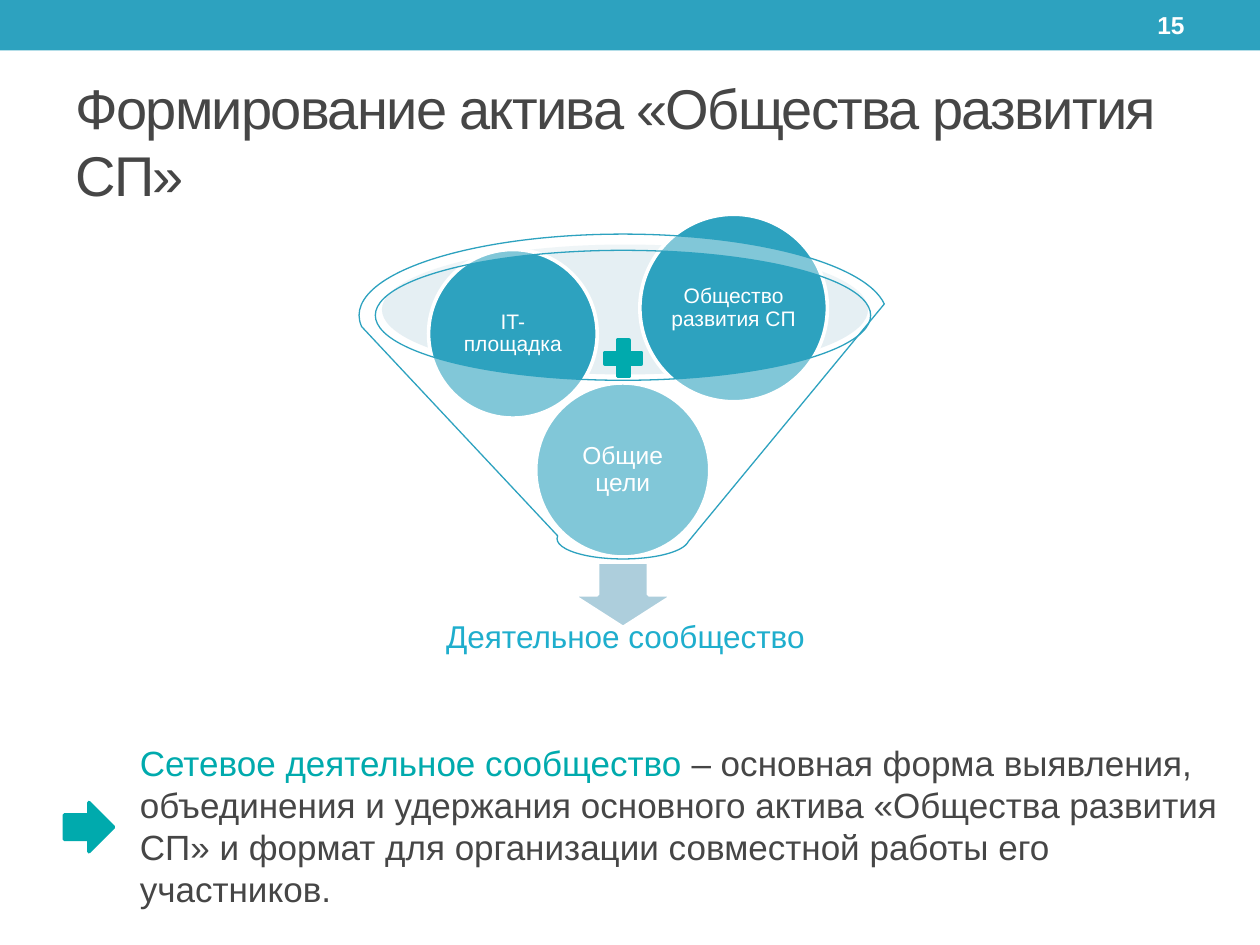
"""Build the funnel slide about forming an active community."""
from lxml import etree
from pptx import Presentation
from pptx.dml.color import RGBColor
from pptx.enum.shapes import MSO_SHAPE
from pptx.enum.text import MSO_ANCHOR, PP_ALIGN
from pptx.oxml.ns import qn
from pptx.util import Cm, Pt

RECT, OVAL, FUNNEL = MSO_SHAPE.RECTANGLE, MSO_SHAPE.OVAL, MSO_SHAPE.FUNNEL
DOWN, RIGHT, PLUS = MSO_SHAPE.DOWN_ARROW, MSO_SHAPE.RIGHT_ARROW, MSO_SHAPE.MATH_PLUS
MIDDLE, TOP = MSO_ANCHOR.MIDDLE, MSO_ANCHOR.TOP
ALIGN_L, ALIGN_C, ALIGN_R = PP_ALIGN.LEFT, PP_ALIGN.CENTER, PP_ALIGN.RIGHT
WHITE = RGBColor(0xFF, 0xFF, 0xFF)
BLUE = RGBColor(0x2D, 0xA2, 0xBF)
PALE = RGBColor(0xBE, 0xD7, 0xE2)
MIST = RGBColor(0xAD, 0xCE, 0xDC)
SKY = RGBColor(0x1F, 0xAE, 0xCD)
TEAL = RGBColor(0x00, 0xAA, 0xAD)
GREY = RGBColor(0x46, 0x46, 0x46)


def add_shape(kind, x, y, w, h, fill, line=None, width=2.08, alpha=None):
    sp = s.shapes.add_shape(kind, Cm(x), Cm(y), Cm(w), Cm(h))
    sp.shadow.inherit = False
    sp.fill.solid()
    sp.fill.fore_color.rgb = fill
    if alpha:
        clr = sp.fill._xPr.find(qn("a:solidFill"))[0]
        etree.SubElement(clr, qn("a:alpha")).set("val", str(alpha * 1000))
    if line is None:
        sp.line.fill.background()
    else:
        sp.line.color.rgb = line
        sp.line.width = Pt(width)
    return sp


def write(sp, runs, size, align, anchor=MIDDLE, inset=None, spacing=None):
    tf = sp.text_frame
    tf.word_wrap = True
    tf.vertical_anchor = anchor
    if inset is not None:
        tf.margin_left = tf.margin_right = Cm(inset)
        tf.margin_top = tf.margin_bottom = Cm(inset)
    p = tf.paragraphs[0]
    p.alignment = align
    if spacing:
        p.line_spacing = spacing
    for text, color in runs:
        r = p.add_run()
        r.text = text
        r.font.name = "Arial"
        r.font.size = Pt(size)
        r.font.color.rgb = color
    return p


prs = Presentation()
prs.slide_width, prs.slide_height = Cm(25.4), Cm(19.05)
s = prs.slides.add_slide(prs.slide_layouts[6])

add_shape(RECT, 0, 0, 25.4, 1.02, BLUE)
title = s.shapes.add_textbox(Cm(1.27), Cm(1.47), Cm(22.86), Cm(2.74))
p = write(title, [("Формирование актива «Общества развития СП»", GREY)], 32, ALIGN_L)
p.runs[0]._r.get_or_add_rPr().set("spc", "-100")

add_shape(OVAL, 7.7, 4.93, 9.8, 2.62, PALE, alpha=40)
add_shape(DOWN, 11.53, 11.33, 2.06, 1.32, MIST, WHITE)
label = s.shapes.add_textbox(Cm(7.39), Cm(12.14), Cm(10.44), Cm(1.45))
write(label, [("Деятельное сообщество", SKY)], 18, ALIGN_C, inset=0.36, spacing=0.9)

for text, x, y, d, size in [
    ("Общие цели", 10.8, 7.72, 3.51, 14),
    ("IT-площадка", 8.64, 5.03, 3.4, 12),
    ("Общество развития СП", 12.9, 4.32, 3.78, 12),
]:
    sp = add_shape(OVAL, x, y, d, d, BLUE, WHITE)
    write(sp, [(text, WHITE)], size, ALIGN_C, inset=0.05, spacing=0.9)
add_shape(FUNNEL, 7.24, 4.72, 10.64, 6.55, WHITE, BLUE, 0.75, 40)

number = s.shapes.add_textbox(Cm(21.16), Cm(0.05), Cm(2.97), Cm(0.91))
p = write(number, [("15", WHITE)], 14, ALIGN_R)
p.runs[0].font.bold = True

body = s.shapes.add_textbox(Cm(1.3), Cm(14.83), Cm(24.1), Cm(3.68))
p = write(body, [
    ("Сетевое деятельное сообщество ", TEAL),
    ("– основная форма выявления, объединения и удержания основного актива "
     "«Общества развития СП» и формат для организации совместной работы "
     "его участников.", GREY),
], 20, ALIGN_L, TOP)
pPr = p._p.get_or_add_pPr()
pPr.set("marL", str(Cm(1.27)))
pPr.set("indent", "0")

for kind, x, y in [(RIGHT, 1.3, 16.18), (PLUS, 12.07, 6.73)]:
    add_shape(kind, x, y, 0.99, 0.99, TEAL, TEAL)

prs.save("out.pptx")
